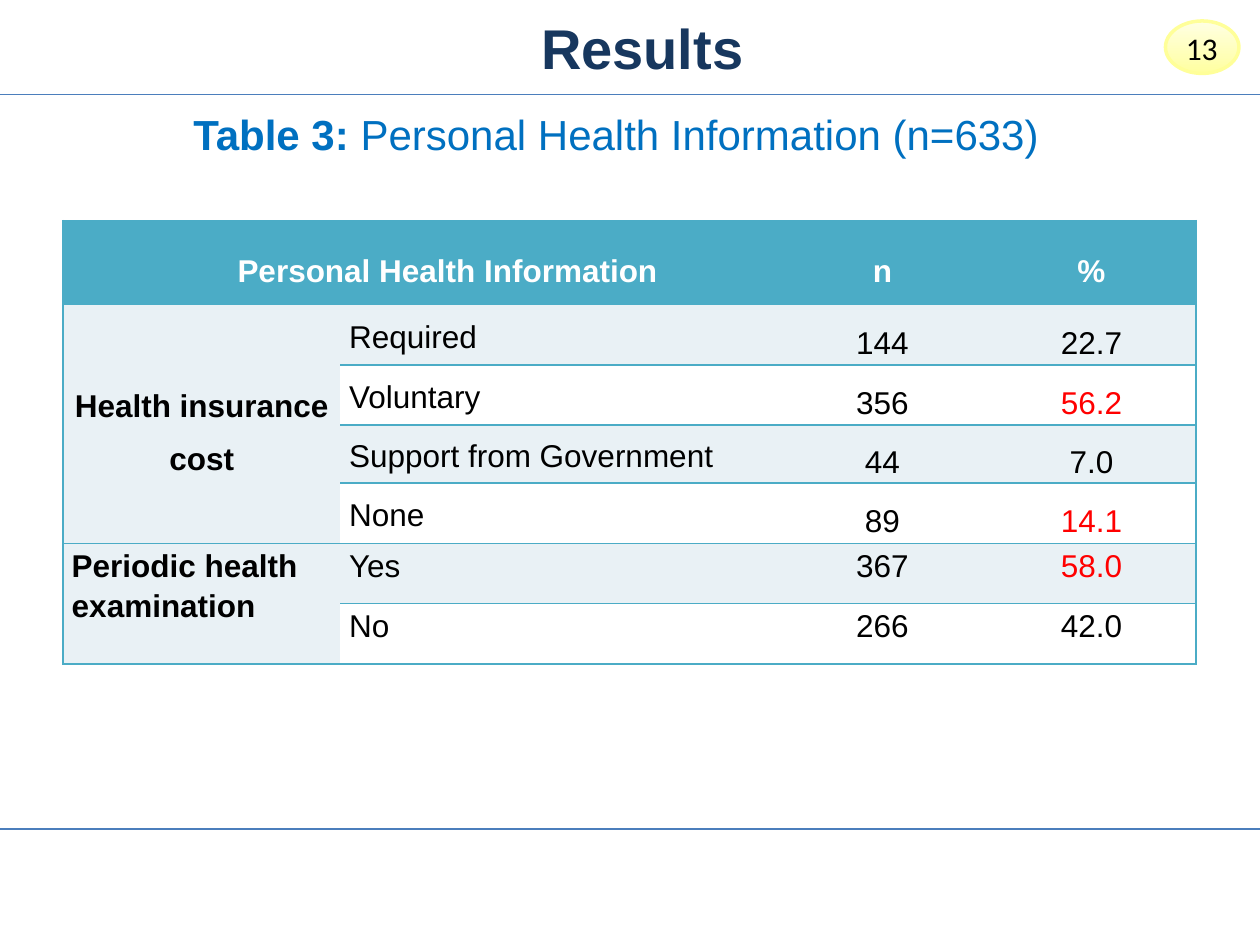
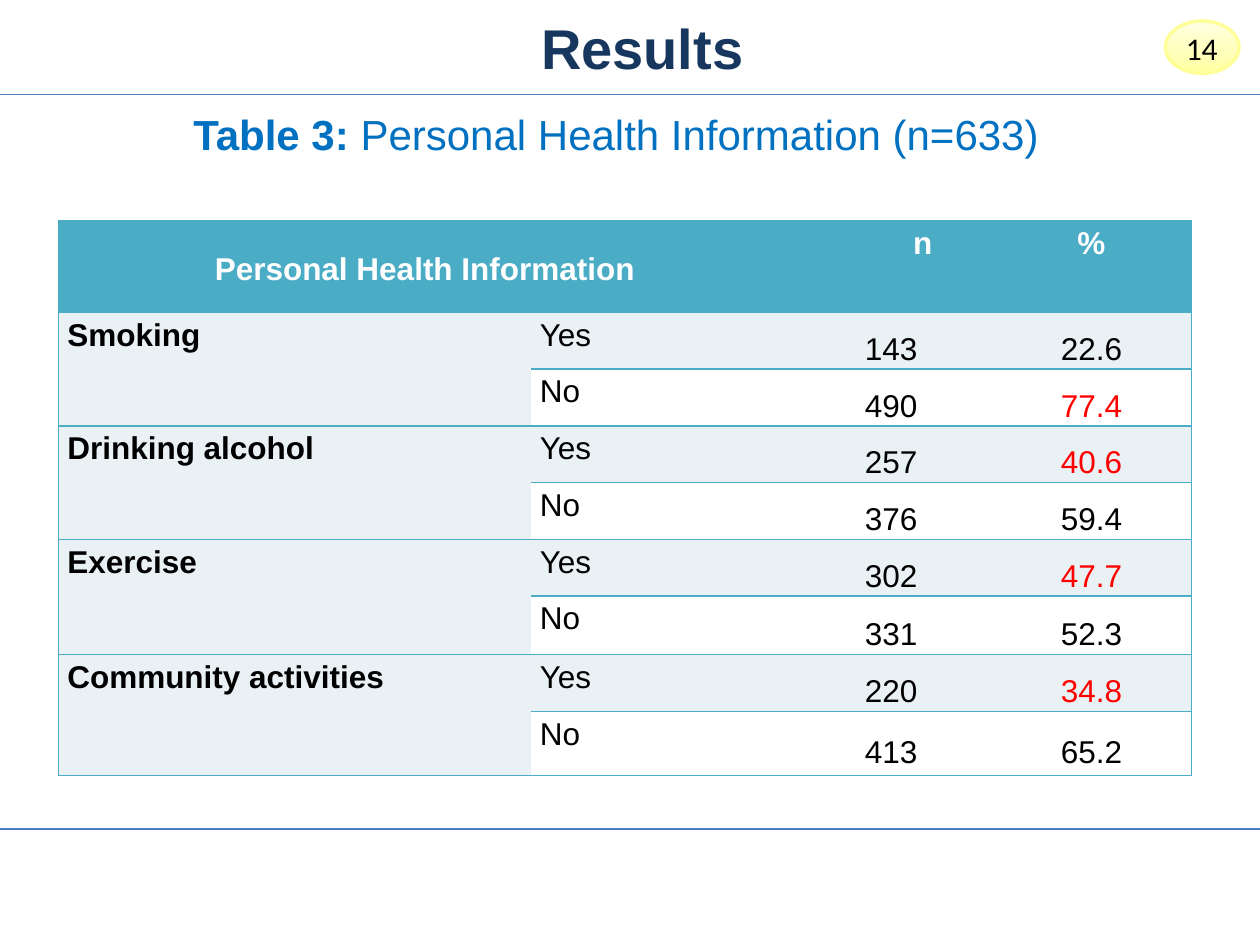
import pptx
import pptx.dml.color
import pptx.enum.shapes
import pptx.enum.text
import pptx.oxml
import pptx.oxml.ns
import pptx.util

Pt = pptx.util.Pt
ALIGN = pptx.enum.text.PP_ALIGN
ANCHOR = pptx.enum.text.MSO_ANCHOR
NAMESPACE = pptx.oxml.ns.nsdecls("a")

COLOURS = {
    "rule": "4B7EBC",
    "badge_low": "FFFFA0",
    "badge_high": "FFFFE3",
    "badge_edge": "FFFF99",
    "title": "17375E",
    "caption": "0070C0",
    "teal": "4BACC6",
    "band": "E9F1F5",
    "white": "FFFFFF",
    "ink": "000000",
    "highlight": "FF0000",
}

CELL_STYLES = {
    "loose": dict(alignment=ALIGN.CENTER, line_spacing=1.5, anchor=ANCHOR.MIDDLE, inset=2.2),
    "spaced": dict(alignment=ALIGN.CENTER, line_spacing=1.5, anchor=ANCHOR.MIDDLE, space_before=Pt(3)),
    "heading": dict(alignment=ALIGN.CENTER, anchor=ANCHOR.MIDDLE),
    "option": dict(anchor=ANCHOR.MIDDLE),
    "centred": dict(alignment=ALIGN.CENTER),
    "plain": {},
}
CELL_DEFAULTS = dict(alignment=ALIGN.LEFT, line_spacing=1.15, anchor=ANCHOR.TOP, inset=5)


def rgb(colour):
    return pptx.dml.color.RGBColor.from_string(COLOURS[colour])


def apply(target, values):
    for name, value in values.items():
        setattr(target, name, value)


class Deck:
    def __init__(self):
        self.presentation = pptx.Presentation()
        apply(self.presentation, {"slide_width": Pt(720), "slide_height": Pt(540)})
        self.slide = None

    def new_slide(self, title, number):
        layout = self.presentation.slide_layouts[5]
        self.slide = self.presentation.slides.add_slide(layout)
        self.rule(54, 1)
        self.rule(473.8, 0.75)
        self.badge(number)
        self.title(title)

    def run(self, paragraph, text, colour, size=18, bold=False, font="Arial"):
        run = paragraph.add_run()
        run.text = text
        apply(run.font, {"name": font, "size": Pt(size), "bold": bold})
        run.font.color.rgb = rgb(colour)

    def rule(self, top, width):
        line = self.slide.shapes.add_connector(
            pptx.enum.shapes.MSO_CONNECTOR.STRAIGHT, 0, Pt(top), Pt(720), Pt(top))
        line.line.color.rgb = rgb("rule")
        line.line.width = Pt(width)
        line._element.spPr.append(pptx.oxml.parse_xml(f"<a:effectLst {NAMESPACE}/>"))

    def text_box(self, left, top, width, height):
        box = self.slide.shapes.add_textbox(Pt(left), Pt(top), Pt(width), Pt(height))
        apply(box.text_frame, {
            "word_wrap": True,
            "auto_size": pptx.enum.text.MSO_AUTO_SIZE.SHAPE_TO_FIT_TEXT,
        })
        return box.text_frame

    def badge(self, number):
        oval = self.slide.shapes.add_shape(
            pptx.enum.shapes.MSO_SHAPE.OVAL, Pt(666), Pt(12), Pt(42), Pt(30))
        oval.shadow.inherit = False
        oval.fill.gradient()
        oval.fill.gradient_angle = 90
        for stop, colour in zip(oval.fill.gradient_stops, ("badge_low", "badge_high")):
            stop.color.rgb = rgb(colour)
        oval.line.color.rgb = rgb("badge_edge")
        oval.line.width = Pt(2)
        label = self.text_box(670.5, 13, 38, 29)
        self.run(label.paragraphs[0], str(number), "ink", font="Calibri")

    def title(self, text):
        title = self.slide.shapes.title
        apply(title, {"left": Pt(118), "top": 0, "width": Pt(507), "height": Pt(54)})
        title.text_frame.vertical_anchor = ANCHOR.MIDDLE
        paragraph = title.text_frame.paragraphs[0]
        paragraph.alignment = ALIGN.CENTER
        self.run(paragraph, text, "title", 32, True)

    def caption(self, label, text):
        frame = self.text_box(35.5, 54, 640, 38)
        frame.margin_right = Pt(14)
        paragraph = frame.paragraphs[0]
        apply(paragraph, {"alignment": ALIGN.CENTER, "line_spacing": 1.15})
        self.run(paragraph, label, "caption", 24, True)
        self.run(paragraph, text, "caption", 24)

    def cell(self, cell, text, style, fill, colour="ink", bold=False):
        values = CELL_DEFAULTS | CELL_STYLES[style]
        inset = Pt(values.pop("inset"))
        apply(cell, {
            "vertical_anchor": values.pop("anchor"),
            "margin_left": inset, "margin_right": inset,
            "margin_top": 0, "margin_bottom": 0,
        })
        paragraph = cell.text_frame.paragraphs[0]
        apply(paragraph, values)
        self.run(paragraph, text, colour, bold=bold)
        cell.fill.solid()
        cell.fill.fore_color.rgb = rgb(fill)

    def borders(self, cell, sides):
        properties = cell._tc.get_or_add_tcPr()
        for side in "LRTB":
            paint = "<a:noFill/>"
            if side in sides:
                paint = f'<a:solidFill><a:srgbClr val="{COLOURS["teal"]}"/></a:solidFill>'
            properties.append(pptx.oxml.parse_xml(
                f'<a:ln{side} {NAMESPACE} w="{Pt(1)}">{paint}</a:ln{side}>'))

    def table(self, left, columns, rows, headings, groups, highlights):
        frame = self.slide.shapes.add_table(
            len(rows), len(columns), Pt(left), Pt(126), Pt(sum(columns)), Pt(sum(rows)))
        table = frame.table
        apply(table, {"first_row": False, "horz_banding": False})
        for column, width in zip(table.columns, columns):
            column.width = Pt(width)
        for row, height in zip(table.rows, rows):
            row.height = Pt(height)

        table.cell(0, 0).merge(table.cell(0, 1))
        first = 1
        for topic, _, options in groups:
            last = first + len(options) - 1
            table.cell(first, 0).merge(table.cell(last, 0))
            first = last + 1
        group_ends = {0}
        for _, _, options in groups:
            group_ends.add(max(group_ends) + len(options))

        for r in range(len(rows)):
            for c in range(len(columns)):
                cell = table.cell(r, c)
                sides = {0: "LTB", len(columns) - 1: "RTB"}.get(c, "TB")
                if cell.is_spanned and c == 0:
                    sides = "LB" if r in group_ends else "L"
                self.borders(cell, sides)

        for c, (text, style) in zip((0, 2, 3), headings):
            self.cell(table.cell(0, c), text, style, "teal", "white", True)
        r = 1
        for topic, styles, options in groups:
            topic_style, option_style, value_style = styles
            self.cell(table.cell(r, 0), topic, topic_style, "band", bold=True)
            for option, count, percent in options:
                fill = "band" if r % 2 else "white"
                colour = "highlight" if percent in highlights else "ink"
                self.cell(table.cell(r, 1), option, option_style, fill)
                self.cell(table.cell(r, 2), count, value_style, fill)
                self.cell(table.cell(r, 3), percent, value_style, fill, colour)
                r += 1
        return table

    def indent(self, cell, **values):
        properties = cell.text_frame.paragraphs[0]._p.get_or_add_pPr()
        for name, points in values.items():
            properties.set(name, str(Pt(points)))


def results_slide(deck, number):
    deck.new_slide("Results ", number)
    deck.caption("Table 3: ", "Personal Health Information (n=633)")


def main():
    deck = Deck()

    results_slide(deck, 13)
    insurance = deck.table(
        36, [158.5, 250, 119.5, 119.5], [48, 34.5, 34.5, 33, 34.5, 34.5, 34.5],
        [("Personal Health Information ", "loose"), ("n", "loose"), ("%", "loose")],
        [
            ("Health insurance cost", ("loose", "option", "loose"), [
                ("Required", "144", "22.7"),
                ("Voluntary", "356", "56.2"),
                ("Support from Government", "44", "7.0"),
                ("None", "89", "14.1"),
            ]),
            ("Periodic health examination", ("plain", "plain", "centred"), [
                ("Yes", "367", "58.0"),
                ("No", "266", "42.0"),
            ]),
        ],
        {"56.2", "14.1", "58.0"})
    deck.indent(insurance.cell(0, 0), marL=0, indent=36)

    results_slide(deck, 14)
    habit_styles = ("plain", "plain", "spaced")
    habits = deck.table(
        33.5, [270, 148.5, 114.5, 114.5], [52.5] + [32.4] * 5 + [33.5, 32.4, 36.7],
        [("Personal Health Information", "heading"), ("n", "centred"), ("%", "centred")],
        [
            ("Smoking", habit_styles, [("Yes", "143", "22.6"), ("No", "490", "77.4")]),
            ("Drinking alcohol", habit_styles, [("Yes", "257", "40.6"), ("No", "376", "59.4")]),
            ("Exercise", habit_styles, [("Yes", "302", "47.7"), ("No", "331", "52.3")]),
            ("Community activities", habit_styles, [("Yes", "220", "34.8"), ("No", "413", "65.2")]),
        ],
        {"77.4", "40.6", "47.7", "34.8"})
    deck.indent(habits.cell(0, 2), marL=36, indent=0)

    deck.presentation.save("out.pptx")


if __name__ == "__main__":
    main()
